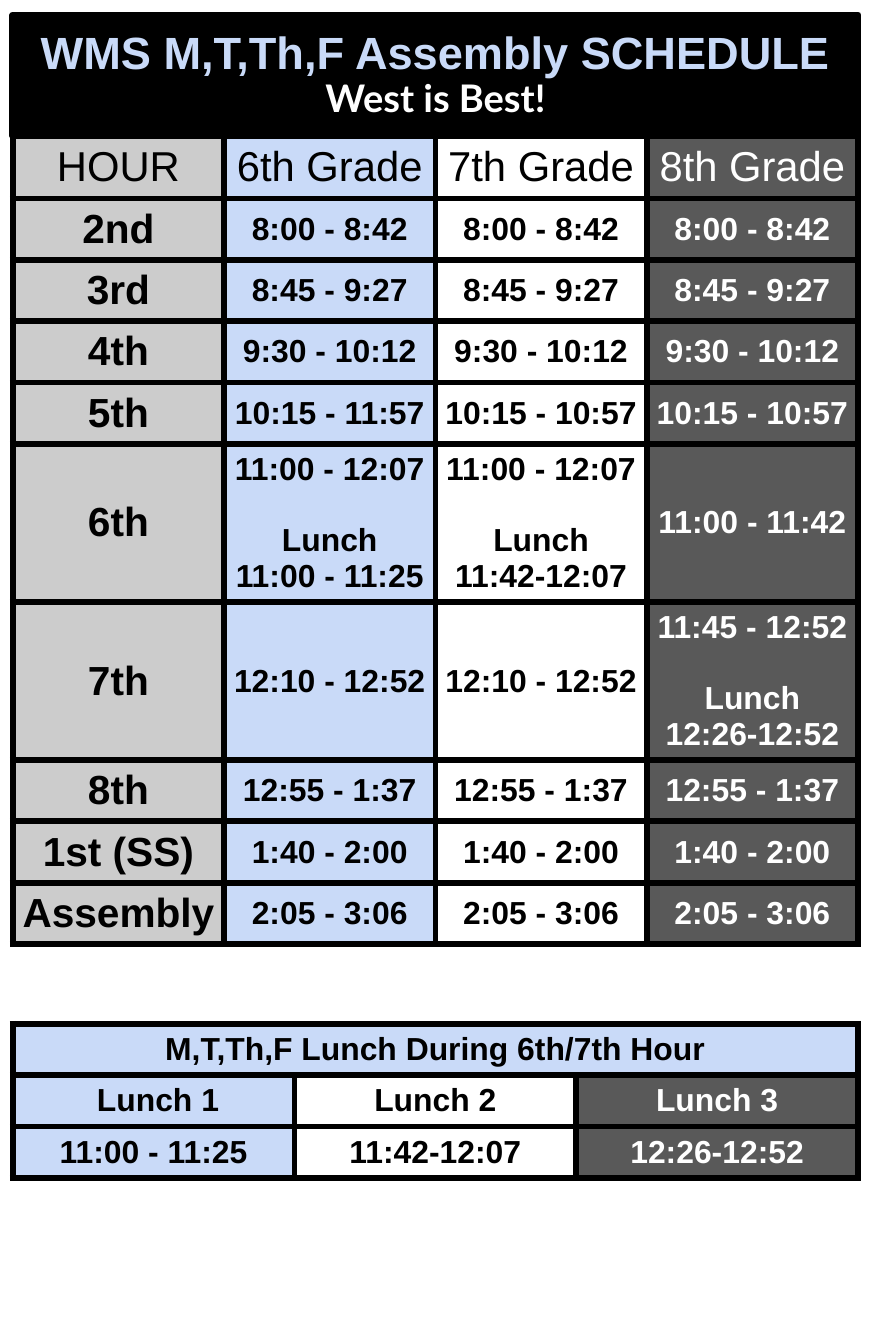
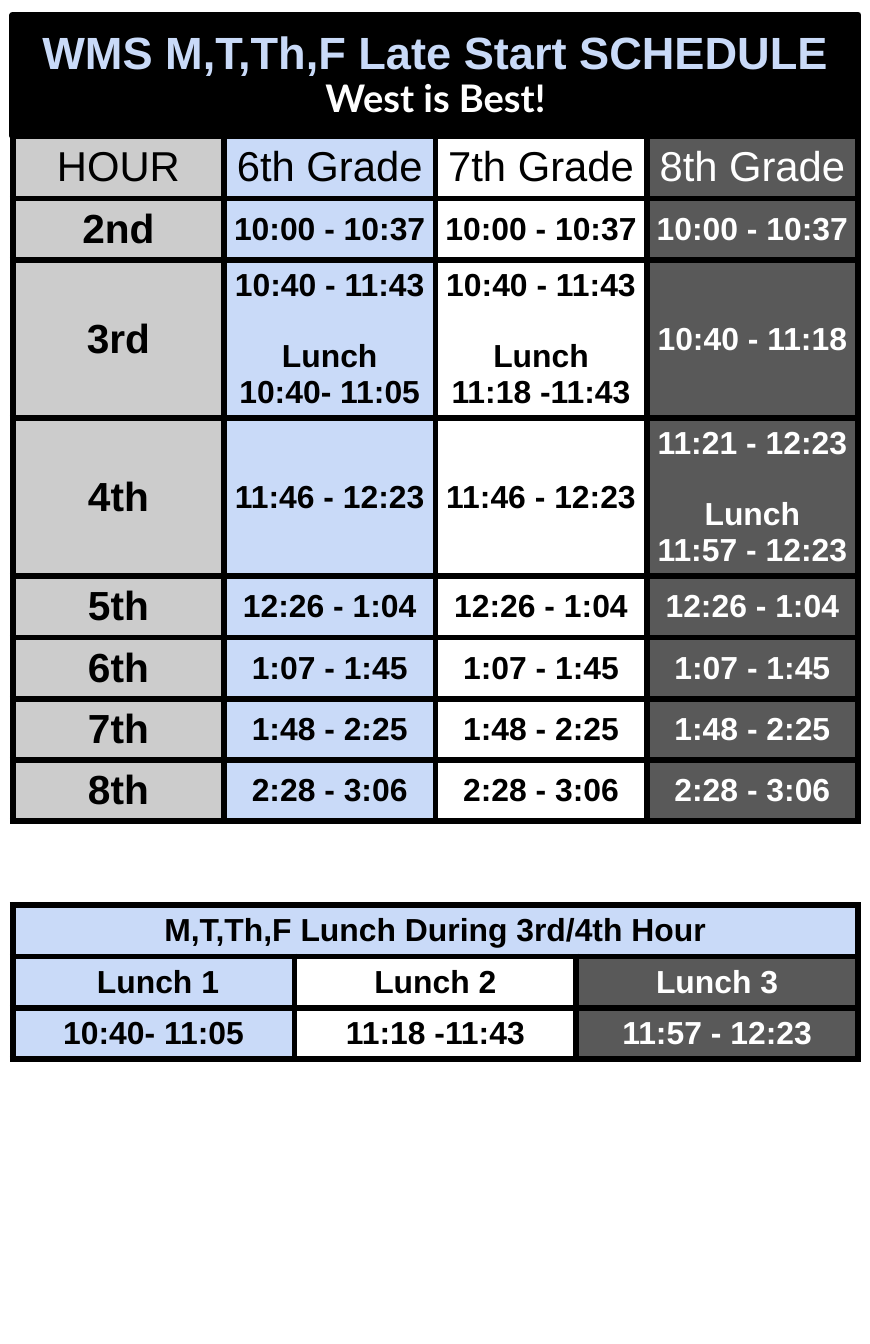
from lxml.etree import SubElement
from pptx import Presentation
from pptx.dml.color import RGBColor
from pptx.enum.text import MSO_ANCHOR, MSO_AUTO_SIZE, PP_ALIGN
from pptx.oxml.ns import qn
from pptx.util import Cm, Pt

# Content: a row with one time has that time for every grade
GRADES = ("HOUR", "6th Grade", "7th Grade", "8th Grade")
LUNCH_NAMES = (" Lunch 1", "Lunch 2", "Lunch 3")
MOTTO = "West is Best!"
SCHEDULES = [
    {
        "title": "WMS M,T,Th,F Assembly SCHEDULE",
        "hours": [
            ("2nd", "8:00 - 8:42"),
            ("3rd", "8:45 - 9:27"),
            ("4th", "9:30 - 10:12"),
            ("5th", "10:15 - 11:57", "10:15 - 10:57", "10:15 - 10:57"),
            ("6th", "11:00 - 12:07\nLunch\n11:00 - 11:25",
             "11:00 - 12:07\nLunch\n11:42-12:07", "11:00 - 11:42"),
            ("7th", "12:10 - 12:52", "12:10 - 12:52",
             "11:45 - 12:52\nLunch\n12:26-12:52"),
            ("8th", "12:55 - 1:37"),
            ("1st (SS)", "1:40 - 2:00"),
            ("Assembly", "2:05 - 3:06"),
        ],
        "lunch_title": "M,T,Th,F Lunch During 6th/7th Hour",
        "lunches": ("11:00 - 11:25", "11:42-12:07", "12:26-12:52"),
        "lunch_top": 32.89,
    },
    {
        "title": "WMS M,T,Th,F Late Start SCHEDULE",
        "hours": [
            ("2nd", "10:00 - 10:37"),
            ("3rd", "10:40 - 11:43\nLunch\n10:40- 11:05",
             "10:40 - 11:43\nLunch\n11:18 -11:43", "10:40 - 11:18"),
            ("4th", "11:46 - 12:23", "11:46 - 12:23",
             "11:21 - 12:23\nLunch\n11:57 - 12:23"),
            ("5th", "12:26 - 1:04"),
            ("6th", "1:07 - 1:45"),
            ("7th", "1:48 - 2:25"),
            ("8th", "2:28 - 3:06"),
        ],
        "lunch_title": "M,T,Th,F Lunch During 3rd/4th Hour",
        "lunches": ("10:40- 11:05", "11:18 -11:43", "11:57 - 12:23"),
        "lunch_top": 29.08,
    },
]

# Shared look
COLORS = {"black": "000000", "white": "FFFFFF", "gray": "CCCCCC",
          "blue": "C9DAF8", "dark": "595959"}
GRADE_FILLS = ("blue", "white", "dark")
LEFT, WIDTH = 0.41, 27.15
TITLE_TOP, TITLE_HEIGHT = 0.48, 3.89
HEADER_ROW, HOUR_ROW, LUNCH_HOUR_ROW, LUNCH_ROW = 2.01, 1.97, 5.08, 1.65
BORDER = Pt(6)
LUNCH_GAP = 32.4


def rgb(name):
    return RGBColor.from_string(COLORS[name])


def write(p, text, size, color="black", bold=True, font="Arial", before=0, spacing=None):
    p.alignment = PP_ALIGN.CENTER
    p.space_before = Pt(before)
    if spacing:
        p.line_spacing = spacing
    r = p.add_run()
    r.text = text
    r.font.name, r.font.size, r.font.bold = font, Pt(size), bold
    r.font.color.rgb = rgb(color)


def add_borders(cell):
    tc_pr = cell._tc.get_or_add_tcPr()
    for side in ("lnL", "lnR", "lnT", "lnB"):
        ln = SubElement(tc_pr, qn(f"a:{side}"), w=str(BORDER))
        fill = SubElement(ln, qn("a:solidFill"))
        SubElement(fill, qn("a:srgbClr"), val=COLORS["black"])


def fill_cell(cell, text, fill, size, bold=True):
    cell.fill.solid()
    cell.fill.fore_color.rgb = rgb(fill)
    color = "white" if fill == "dark" else "black"
    tf = cell.text_frame
    for i, line in enumerate(text.split("\n")):
        p = tf.add_paragraph() if i else tf.paragraphs[0]
        write(p, line, size, color, bold, before=LUNCH_GAP if i == 1 else 0)


def add_grid(s, top, heights, columns):
    table = s.shapes.add_table(len(heights), columns, Cm(LEFT), Cm(top),
                               Cm(WIDTH), Cm(sum(heights))).table
    table.first_row = table.horz_banding = False
    for column in table.columns:
        column.width = Cm(WIDTH / columns)
    for row, height in zip(table.rows, heights):
        row.height = Cm(height)
        for cell in row.cells:
            cell.vertical_anchor = MSO_ANCHOR.MIDDLE
            cell.margin_left = cell.margin_right = Cm(0.25)
            cell.margin_top = cell.margin_bottom = Cm(0.25)
            add_borders(cell)
    return table


def add_title(s, title):
    sp = s.shapes.title
    sp.left, sp.top, sp.width, sp.height = (
        Cm(LEFT), Cm(TITLE_TOP), Cm(WIDTH), Cm(TITLE_HEIGHT))
    sp.fill.solid()
    sp.fill.fore_color.rgb = rgb("black")
    sp.line.color.rgb = rgb("black")
    sp.line.width = BORDER
    tf = sp.text_frame
    tf.auto_size, tf.word_wrap = MSO_AUTO_SIZE.NONE, True
    tf.vertical_anchor = MSO_ANCHOR.MIDDLE
    tf.margin_left = tf.margin_right = tf.margin_top = tf.margin_bottom = Cm(0.43)
    write(tf.paragraphs[0], title, 41.1, "blue", spacing=0.9)
    write(tf.add_paragraph(), MOTTO, 34.6, "white", font="Lato", spacing=0.9)


def add_hours(s, hours):
    heights = [HEADER_ROW] + [
        LUNCH_HOUR_ROW if any("\n" in time for time in times) else HOUR_ROW
        for _, *times in hours]
    table = add_grid(s, TITLE_TOP + TITLE_HEIGHT, heights, len(GRADES))
    for c, (text, fill) in enumerate(zip(GRADES, ("gray", *GRADE_FILLS))):
        fill_cell(table.cell(0, c), text, fill, 38, bold=False)
    for i, (hour, *times) in enumerate(hours, 1):
        fill_cell(table.cell(i, 0), hour, "gray", 37)
        if len(times) == 1:
            times *= len(GRADE_FILLS)
        for c, (time, fill) in enumerate(zip(times, GRADE_FILLS), 1):
            fill_cell(table.cell(i, c), time, fill, 29)


def add_lunches(s, title, lunches, top):
    table = add_grid(s, top, [LUNCH_ROW] * 3, len(lunches))
    table.cell(0, 0).merge(table.cell(0, len(lunches) - 1))
    fill_cell(table.cell(0, 0), title, "blue", 29)
    for i, texts in enumerate((LUNCH_NAMES, lunches), 1):
        for c, (text, fill) in enumerate(zip(texts, GRADE_FILLS)):
            fill_cell(table.cell(i, c), text, fill, 29)


def main():
    prs = Presentation()
    prs.slide_width, prs.slide_height = Cm(27.94), Cm(43.18)
    for schedule in SCHEDULES:
        s = prs.slides.add_slide(prs.slide_layouts[5])
        add_title(s, schedule["title"])
        add_hours(s, schedule["hours"])
        add_lunches(s, schedule["lunch_title"], schedule["lunches"], schedule["lunch_top"])
    prs.save("out.pptx")


if __name__ == "__main__":
    main()
